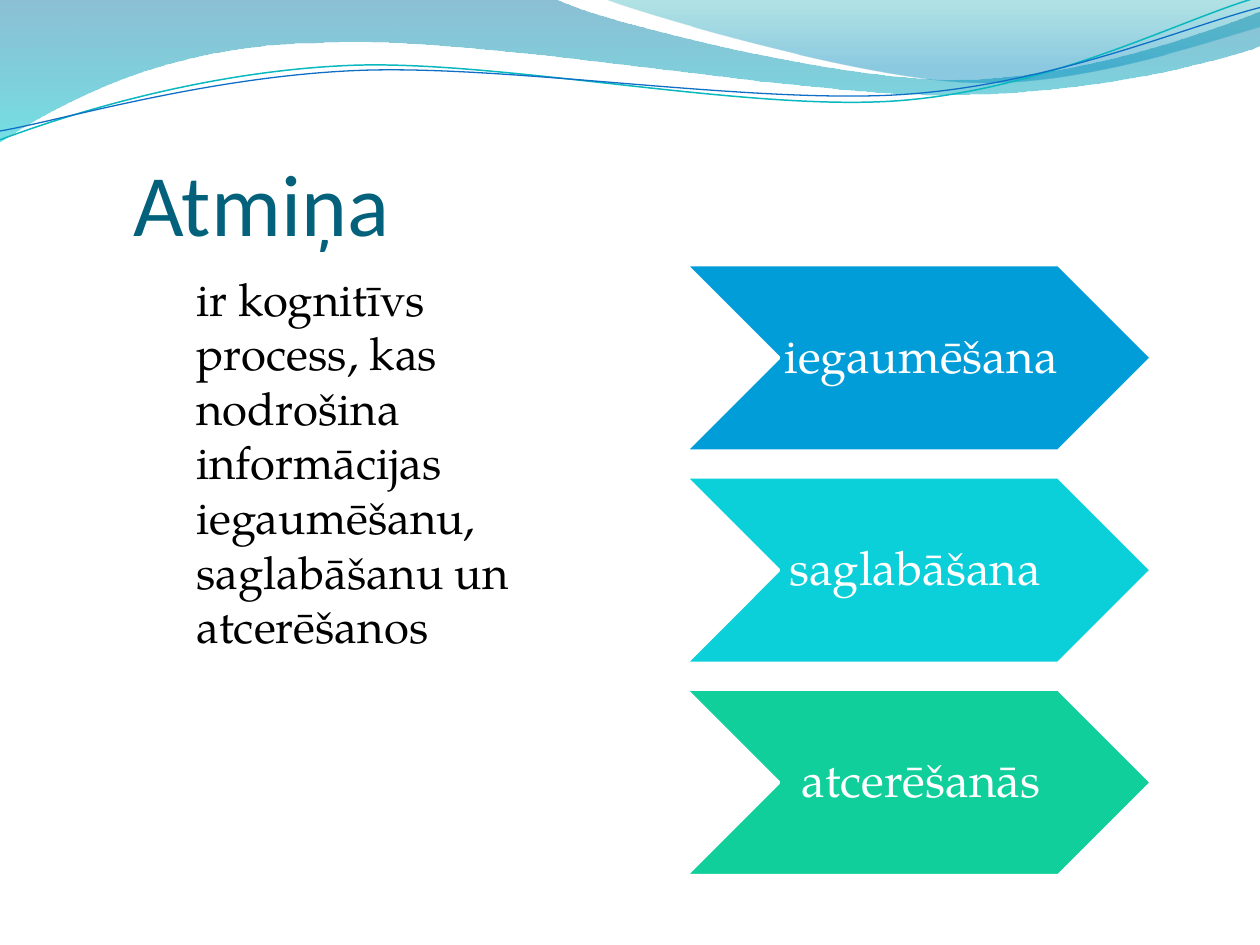
from pptx import Presentation
from pptx.dml.color import RGBColor
from pptx.enum.shapes import MSO_SHAPE
from pptx.enum.text import MSO_ANCHOR, PP_ALIGN
from pptx.oxml.ns import qn
from pptx.util import Inches, Pt
from lxml.etree import SubElement

SERIF = "TeX Gyre Pagella"

LEFT_WAVE = [
    (0, -0.01), (4.4, -0.01),
    (4.76, 0.17, 6.64, 0.63, 7.58, 0.63), (8.53, 0.63, 9.58, 0.26, 10, 0.09),
    (10.01, 0.36),
    (9.83, 0.44, 8.7, 0.76, 7.46, 0.75), (6.22, 0.75, 3.82, 0.28, 2.57, 0.34),
    (1.29, 0.35, 0.46, 0.83, -0.01, 1.13), (0, -0.01),
]
RIGHT_WAVE = [
    (4.79, -0.01),
    (5.09, 0.11, 6.82, 0.62, 7.69, 0.65), (8.56, 0.69, 9.61, 0.32, 10, 0.21),
    (10, 0), (4.79, -0.01),
]
TEAL_LINE = [
    (0, 1.11),
    (0.48, 0.93, 1.58, 0.57, 2.77, 0.52), (3.95, 0.47, 5.93, 0.89, 7.13, 0.8),
    (8.33, 0.71, 9.38, 0.15, 9.98, -0.02),
]
BLUE_LINE = [
    (0, 1.04),
    (0.47, 0.96, 1.64, 0.61, 2.83, 0.56), (4.03, 0.51, 5.97, 0.83, 7.17, 0.75),
    (8.36, 0.67, 9.41, 0.21, 10, 0.06),
]
STEPS = [("iegaumēšana", "009DD9"), ("saglabāšana ", "0BD0D9"), ("atcerēšanās", "10CF9B")]


def color(value):
    """Turn a hex string into a colour."""
    return RGBColor.from_string(value)


def write(shape, text, size, font, ink, align=PP_ALIGN.LEFT, anchor=MSO_ANCHOR.TOP,
          margins=(0.1, 0.05, 0.1, 0.05), line_spacing=None, before=0):
    """Put one formatted paragraph into a shape."""
    frame = shape.text_frame
    frame.word_wrap = True
    frame.vertical_anchor = anchor
    (frame.margin_left, frame.margin_top,
     frame.margin_right, frame.margin_bottom) = map(Inches, margins)
    paragraph = frame.paragraphs[0]
    paragraph.alignment = align
    paragraph.space_before = Pt(before)
    if line_spacing:
        paragraph.line_spacing = line_spacing
    run = paragraph.add_run()
    run.text = text
    run.font.size = Pt(size)
    run.font.name = font
    run.font.color.rgb = color(ink)


def add_curve(slide, path, close):
    """Draw a freeform whose six-number segments are Bezier curves."""
    start, *ends = [tuple(map(Inches, segment[-2:])) for segment in path]
    builder = slide.shapes.build_freeform(*start)
    builder.add_line_segments(ends, close=close)
    shape = builder.convert_to_shape()
    shape.shadow.inherit = False
    lines = list(shape.element.spPr.iter(qn("a:lnTo")))
    for line, segment in zip(lines, path[1:]):
        if len(segment) == 6:
            curve = SubElement(line.getparent(), qn("a:cubicBezTo"))
            line.getparent().replace(line, curve)
            for x, y in zip(segment[::2], segment[1::2]):
                SubElement(curve, qn("a:pt"), x=str(Inches(x) - shape.left),
                           y=str(Inches(y) - shape.top))
    return shape


def add_wave(slide, path, stops):
    """Draw a wave with a translucent top-to-bottom gradient."""
    shape = add_curve(slide, path, True)
    shape.line.fill.background()
    shape.fill.gradient()
    shape.fill.gradient_angle = 270
    for stop, (position, value, _) in zip(shape.fill.gradient_stops, stops):
        stop.position = position
        stop.color.rgb = color(value)
    for element, (_, _, opacity) in zip(shape.element.spPr.iter(qn("a:srgbClr")), stops):
        SubElement(element, qn("a:alpha"), val=str(opacity * 1000))


def add_header(slide):
    """Draw the waves and thin lines along the top edge."""
    add_wave(slide, LEFT_WAVE, [(0, "0074A1", 45), (1, "00C6CF", 55)])
    add_wave(slide, RIGHT_WAVE, [(0, "00A1A9", 30), (0.8, "008BBF", 45)])
    for path, value, width in [(TEAL_LINE, "0AB8BF", 0.85), (BLUE_LINE, "0F6FC6", 0.75)]:
        shape = add_curve(slide, path, False)
        shape.fill.background()
        shape.line.color.rgb = color(value)
        shape.line.width = Pt(width)


def add_title(slide, left, top, width, height):
    """Place and format the title."""
    title = slide.shapes.title
    title.left, title.top, title.width, title.height = left, top, width, height
    write(title, "Atmiņa", 50, "Calibri", "04617B", anchor=MSO_ANCHOR.BOTTOM,
          margins=(0, 0.05, 0, 0))


def add_definition(slide, left, top, width, height):
    """Place the definition text."""
    box = slide.shapes.add_textbox(left, top, width, height)
    write(box, "ir kognitīvs process, kas nodrošina informācijas iegaumēšanu, "
          "saglabāšanu un atcerēšanos", 26, SERIF, "000000", before=5)


def add_steps(slide, left, top, width, height):
    """Stack the chevrons evenly in the given box."""
    step_height = Inches(1.48)
    pitch = (height - step_height) / (len(STEPS) - 1)
    for index, (text, value) in enumerate(STEPS):
        chevron = slide.shapes.add_shape(MSO_SHAPE.CHEVRON, left, int(top + index * pitch),
                                         width, step_height)
        chevron.shadow.inherit = False
        chevron.fill.solid()
        chevron.fill.fore_color.rgb = color(value)
        chevron.line.color.rgb = color("FFFFFF")
        chevron.line.width = Pt(2)
        write(chevron, text, 27, SERIF, "FFFFFF", align=PP_ALIGN.CENTER,
              anchor=MSO_ANCHOR.MIDDLE, margins=(0.04, 0.02, 0, 0.02), line_spacing=0.9)


def main():
    """Build and save the slide."""
    presentation = Presentation()
    presentation.slide_width, presentation.slide_height = Inches(10), Inches(7.5)
    slide = presentation.slides.add_slide(presentation.slide_layouts[5])
    add_header(slide)
    add_title(slide, Inches(1.06), Inches(0.77), Inches(8.44), Inches(1.25))
    add_definition(slide, Inches(1.46), Inches(2.1), Inches(3.15), Inches(4.88))
    add_steps(slide, Inches(5.44), Inches(2.1), Inches(3.7), Inches(4.85))
    presentation.save("out.pptx")


if __name__ == "__main__":
    main()
